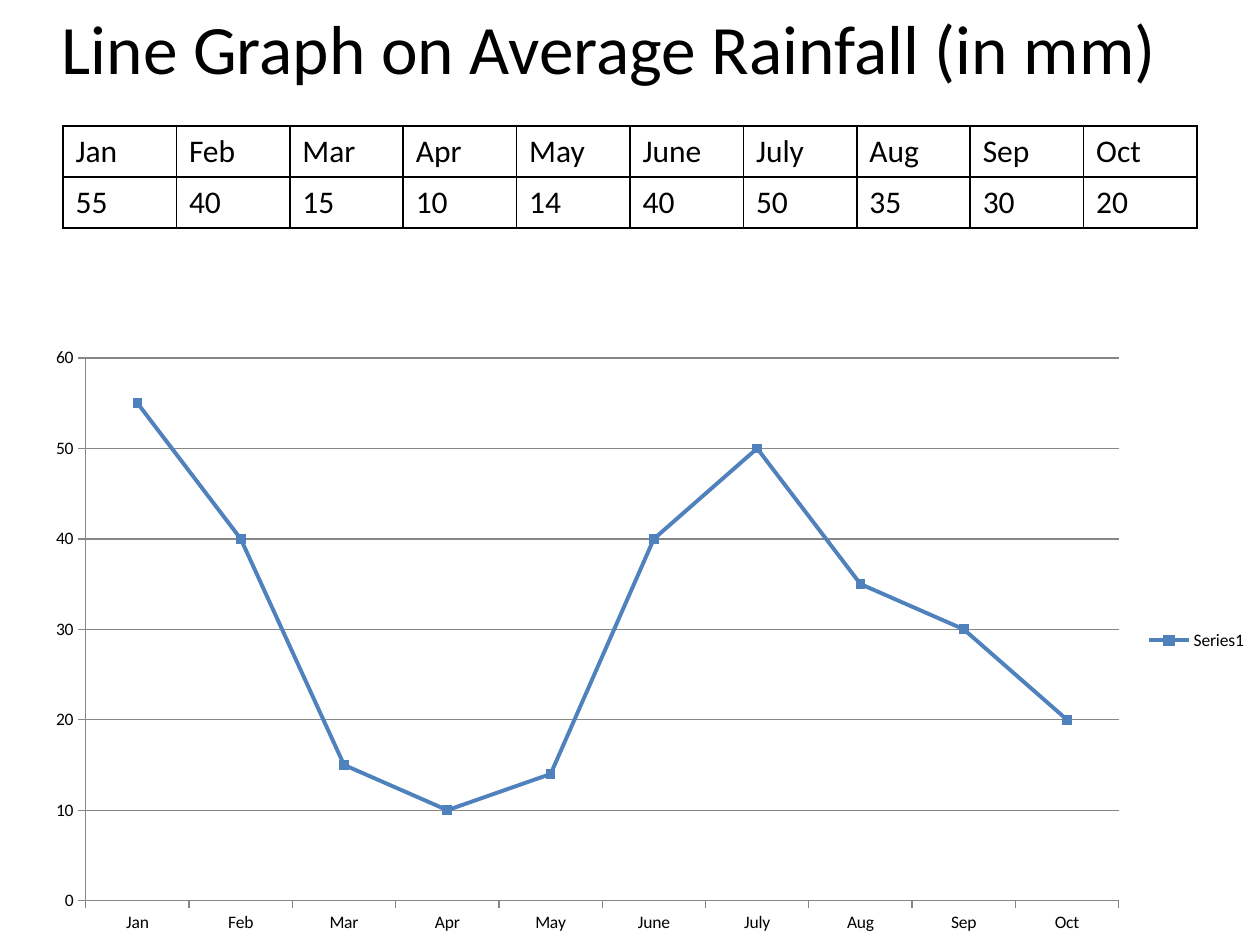
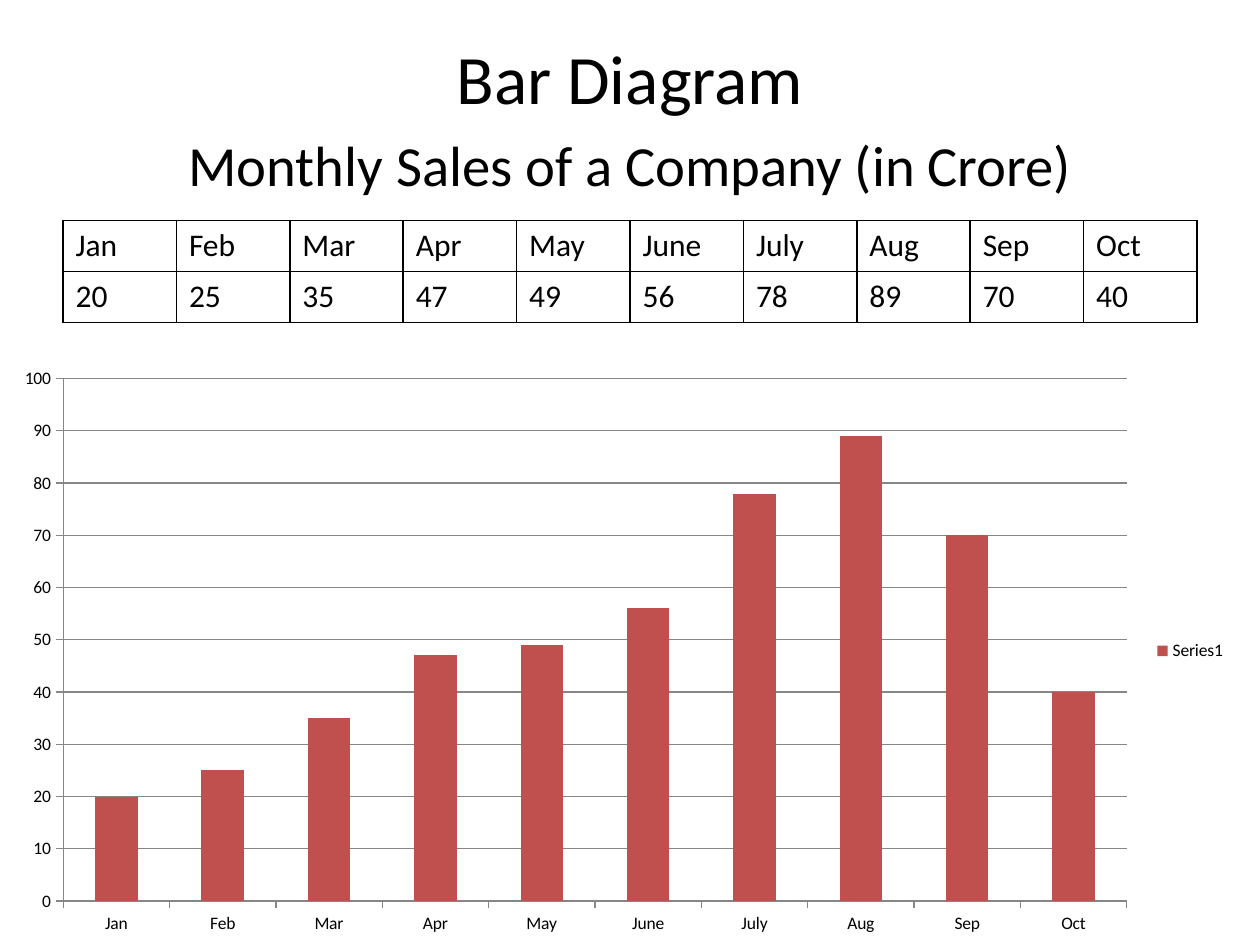
from dataclasses import dataclass
from typing import Any

from lxml.etree import SubElement
from pptx import Presentation
from pptx.chart.data import CategoryChartData
from pptx.dml.color import RGBColor
from pptx.enum.chart import (
    XL_CHART_TYPE, XL_LEGEND_POSITION, XL_MARKER_STYLE, XL_TICK_MARK,
)
from pptx.enum.text import MSO_ANCHOR, MSO_AUTO_SIZE, PP_ALIGN
from pptx.oxml.ns import qn
from pptx.util import Pt


@dataclass(frozen=True)
class Theme:
    font: str = "Calibri"
    ink: str = "000000"
    paper: str = "FFFFFF"
    rule: str = "868686"
    blue: str = "4F81BD"
    red: str = "C0504D"
    title: float = 39.6
    sub: float = 32.4
    cell: float = 18
    label: float = 10


@dataclass(frozen=True)
class Box:
    left: float
    top: float
    width: float
    height: float

    def place(self) -> tuple[Pt, Pt, Pt, Pt]:
        return Pt(self.left), Pt(self.top), Pt(self.width), Pt(self.height)


@dataclass(frozen=True)
class Page:
    lines: tuple[str, ...]
    head: Box
    grid: Box
    plot: Box
    kind: XL_CHART_TYPE
    color: str
    top: int
    values: tuple[int, ...]


THEME = Theme()
MONTHS = ("Jan", "Feb", "Mar", "Apr", "May", "June", "July", "Aug", "Sep", "Oct")
PAGES = (
    Page(("Line Graph on Average Rainfall (in mm)",),
         Box(24, -18, 648, 90), Box(36, 72, 648, 58.4), Box(18, 192, 702, 348),
         XL_CHART_TYPE.LINE_MARKERS, THEME.blue, 60,
         (55, 40, 15, 10, 14, 40, 50, 35, 30, 20)),
    Page(("Bar Diagram", "Monthly Sales of a Company (in Crore)"),
         Box(36, 21.6, 648, 90), Box(36, 126, 648, 58.4), Box(0, 204, 708, 336),
         XL_CHART_TYPE.COLUMN_CLUSTERED, THEME.red, 100,
         (20, 25, 35, 47, 49, 56, 78, 89, 70, 40)),
)


def dress(item: Any, values: dict[str, Any]) -> None:
    """Set each named attribute of the item."""
    for name, value in values.items():
        setattr(item, name, value)


def style(font: Any, size: float) -> None:
    dress(font, {"name": THEME.font, "size": Pt(size), "bold": False})
    font.color.rgb = RGBColor.from_string(THEME.ink)


def paint(fill: Any, color: str) -> None:
    fill.solid()
    fill.fore_color.rgb = RGBColor.from_string(color)


def stroke(line: Any, color: str, width: float) -> None:
    line.color.rgb = RGBColor.from_string(color)
    line.width = Pt(width)


def border(cell: Any) -> None:
    """Rule all four sides; the sides must precede the fill."""
    props = cell._tc.get_or_add_tcPr()
    for side in ("a:lnL", "a:lnR", "a:lnT", "a:lnB"):
        line = SubElement(props, qn(side), w=str(Pt(1)))
        fill = SubElement(line, qn("a:solidFill"))
        SubElement(fill, qn("a:srgbClr"), val=THEME.ink)


def add_title(slide: Any, page: Page) -> None:
    shape = slide.shapes.title
    dress(shape, dict(zip(("left", "top", "width", "height"), page.head.place())))
    frame = shape.text_frame
    dress(frame, {"text": "\n".join(page.lines), "word_wrap": True,
                  "auto_size": MSO_AUTO_SIZE.NONE,
                  "vertical_anchor": MSO_ANCHOR.MIDDLE})
    for par, size in zip(frame.paragraphs, (THEME.title, THEME.sub)):
        par.alignment = PP_ALIGN.CENTER
        style(par.runs[0].font, size)
    for par in frame.paragraphs[1:]:
        par.space_before = Pt(7)


def add_grid(slide: Any, page: Page) -> None:
    rows = (MONTHS, page.values)
    table = slide.shapes.add_table(len(rows), len(MONTHS), *page.grid.place()).table
    dress(table, {"first_row": False, "horz_banding": False})
    for i, row in enumerate(rows):
        for j, value in enumerate(row):
            cell = table.cell(i, j)
            cell.text = str(value)
            style(cell.text_frame.paragraphs[0].runs[0].font, THEME.cell)
            border(cell)
            paint(cell.fill, THEME.paper)


def add_plot(slide: Any, page: Page) -> None:
    data = CategoryChartData()
    data.categories = MONTHS
    data.add_series("Series1", page.values)
    chart = slide.shapes.add_chart(page.kind, *page.plot.place(), data).chart
    dress(chart, {"has_title": False, "has_legend": True})
    dress(chart.legend, {"position": XL_LEGEND_POSITION.RIGHT,
                         "include_in_layout": False})
    style(chart.font, THEME.label)

    axis = chart.value_axis
    dress(axis, {"minimum_scale": 0, "maximum_scale": page.top,
                 "major_unit": 10, "has_major_gridlines": True})
    stroke(axis.major_gridlines.format.line, THEME.rule, 0.75)
    for side in (axis, chart.category_axis):
        side.major_tick_mark = XL_TICK_MARK.OUTSIDE
        stroke(side.format.line, THEME.rule, 0.75)

    plot = chart.plots[0]
    plot.vary_by_categories = False
    series = plot.series[0]
    if page.kind == XL_CHART_TYPE.LINE_MARKERS:
        series.smooth = False
        stroke(series.format.line, page.color, 2.25)
        mark = series.marker
        dress(mark, {"style": XL_MARKER_STYLE.SQUARE, "size": 5})
        paint(mark.format.fill, page.color)
        stroke(mark.format.line, page.color, 0.75)
    else:
        plot.gap_width = 150
        paint(series.format.fill, page.color)


def main() -> None:
    deck = Presentation()
    dress(deck, {"slide_width": Pt(720), "slide_height": Pt(540)})
    for page in PAGES:
        slide = deck.slides.add_slide(deck.slide_layouts.get_by_name("Title Only"))
        paint(slide.background.fill, THEME.paper)
        for draw in (add_title, add_grid, add_plot):
            draw(slide, page)
    deck.save("out.pptx")


if __name__ == "__main__":
    main()
